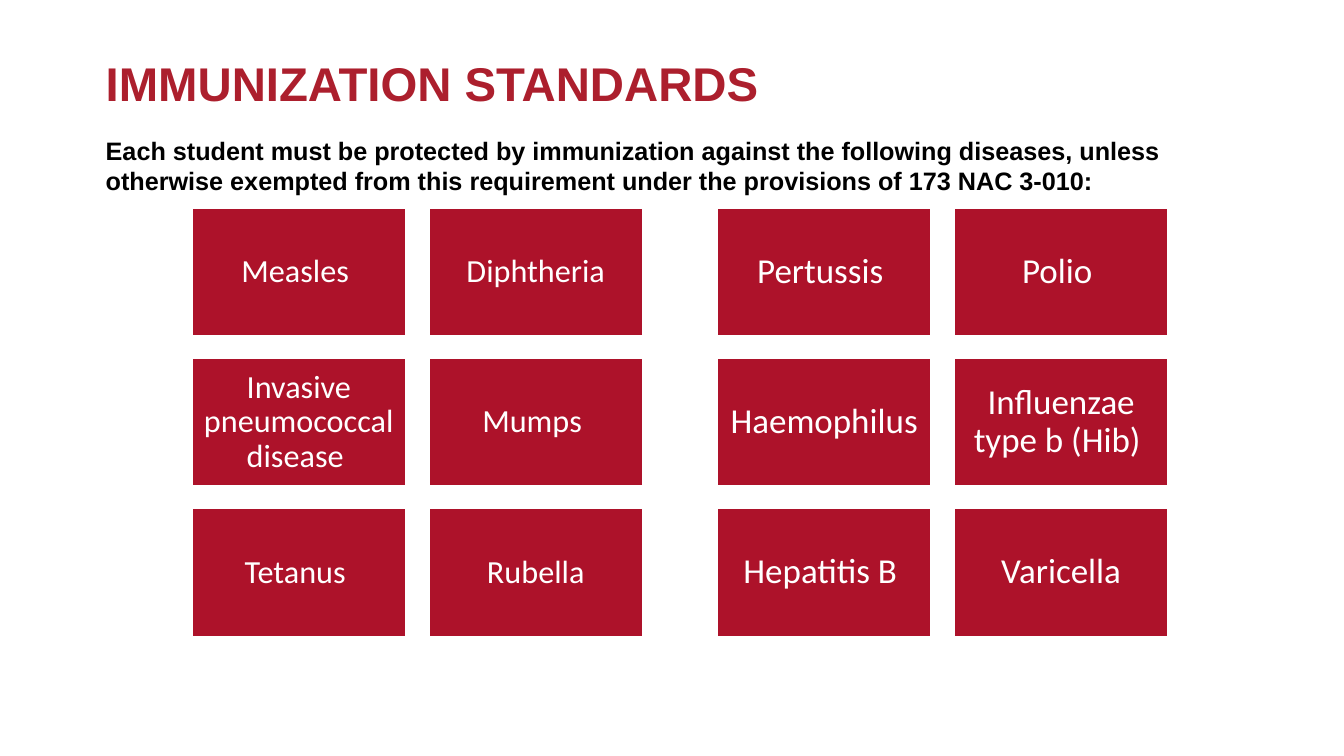
"""Build the immunization standards slide with two groups of disease tiles."""
from dataclasses import dataclass

from pptx import Presentation
from pptx.dml.color import RGBColor
from pptx.enum.shapes import MSO_SHAPE
from pptx.enum.text import MSO_ANCHOR, PP_ALIGN
from pptx.shapes.autoshape import Shape
from pptx.slide import Slide
from pptx.util import Inches, Pt

TITLE_RED = RGBColor(0xAC, 0x1F, 0x2D)
TILE_RED = RGBColor(0xAD, 0x12, 0x2A)
WHITE = RGBColor(0xFF, 0xFF, 0xFF)
BLACK = RGBColor(0, 0, 0)

COLUMNS = 2
TILE_TOP = 2.06
TILE_WIDTH, TILE_HEIGHT = 2.13, 1.28
COLUMN_STEP, ROW_STEP = 2.35, 1.49


@dataclass(frozen=True)
class TileGroup:
    left: float
    font_size: float
    diseases: tuple[str, ...]


TILE_GROUPS = (
    TileGroup(7.11, 25, ("Pertussis ", "Polio ", "Haemophilus ",
                         "Influenzae type b (Hib) ", "Hepatitis B ", "Varicella")),
    TileGroup(1.9, 23, ("Measles ", "Diphtheria", "Invasive pneumococcal disease ",
                        "Mumps ", "Tetanus ", "Rubella")),
)


def write_text(shape: Shape, text: str, *, size: float, color: RGBColor,
               font_name: str = "Arial", bold: bool = False,
               alignment: PP_ALIGN = PP_ALIGN.LEFT,
               anchor: MSO_ANCHOR = MSO_ANCHOR.TOP,
               line_spacing: float = 1.0, vertical_margin: float = 0.05) -> None:
    frame = shape.text_frame
    frame.word_wrap = True
    frame.vertical_anchor = anchor
    frame.margin_left = frame.margin_right = Inches(0.1)
    frame.margin_top = frame.margin_bottom = Inches(vertical_margin)
    paragraph = frame.paragraphs[0]
    paragraph.alignment = alignment
    paragraph.line_spacing = line_spacing
    run = paragraph.add_run()
    run.text = text
    run.font.name = font_name
    run.font.size = Pt(size)
    run.font.bold = bold
    run.font.color.rgb = color


def draw_tile_group(slide: Slide, group: TileGroup) -> None:
    for index, disease in enumerate(group.diseases):
        row, column = divmod(index, COLUMNS)
        tile = slide.shapes.add_shape(
            MSO_SHAPE.RECTANGLE,
            Inches(group.left + column * COLUMN_STEP), Inches(TILE_TOP + row * ROW_STEP),
            Inches(TILE_WIDTH), Inches(TILE_HEIGHT))
        tile.shadow.inherit = False
        tile.fill.solid()
        tile.fill.fore_color.rgb = TILE_RED
        tile.line.color.rgb = WHITE
        tile.line.width = Pt(2)
        write_text(tile, disease, size=group.font_size, color=WHITE, font_name="Calibri",
                   alignment=PP_ALIGN.CENTER, anchor=MSO_ANCHOR.MIDDLE,
                   line_spacing=0.9, vertical_margin=0.1)


def main() -> None:
    presentation = Presentation()
    presentation.slide_width = Inches(13.33)
    presentation.slide_height = Inches(7.5)
    slide = presentation.slides.add_slide(presentation.slide_layouts[6])

    title = slide.shapes.add_textbox(Inches(0.95), Inches(0.43), Inches(11.76), Inches(0.68))
    write_text(title, "IMMUNIZATION STANDARDS", size=33.8, color=TITLE_RED, bold=True,
               anchor=MSO_ANCHOR.BOTTOM, line_spacing=0.9, vertical_margin=0)

    introduction = slide.shapes.add_textbox(
        Inches(0.95), Inches(1.29), Inches(11.69), Inches(1.31))
    write_text(introduction,
               "Each student must be protected by immunization against the following "
               "diseases, unless otherwise exempted from this requirement under the "
               "provisions of 173 NAC 3-010:",
               size=18, color=BLACK, bold=True)

    for group in TILE_GROUPS:
        draw_tile_group(slide, group)

    presentation.save("out.pptx")


if __name__ == "__main__":
    main()
